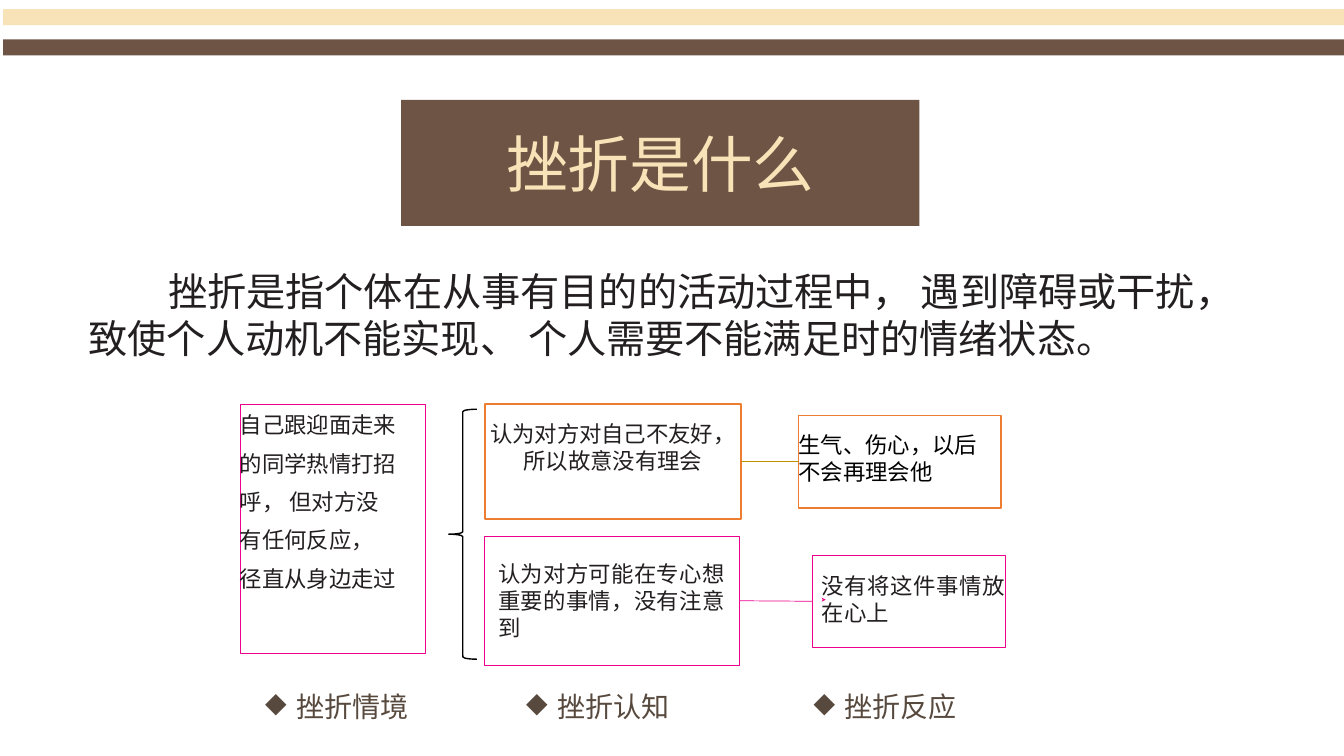
from dataclasses import dataclass

from lxml import etree
from pptx import Presentation
from pptx.dml.color import RGBColor
from pptx.enum.shapes import MSO_CONNECTOR, MSO_SHAPE
from pptx.enum.text import MSO_ANCHOR, PP_ALIGN
from pptx.oxml.ns import qn
from pptx.shapes.autoshape import Shape
from pptx.slide import Slide
from pptx.util import Inches, Pt

RECTANGLE = MSO_SHAPE.RECTANGLE
LEFT_BRACE = MSO_SHAPE.LEFT_BRACE
STRAIGHT = MSO_CONNECTOR.STRAIGHT
MIDDLE, TOP = MSO_ANCHOR.MIDDLE, MSO_ANCHOR.TOP
LEFT, CENTER, JUSTIFY = PP_ALIGN.LEFT, PP_ALIGN.CENTER, PP_ALIGN.JUSTIFY
LEFT_SIDE, RIGHT_SIDE = 1, 3


@dataclass(frozen=True)
class Theme:
    brown: str = "6E5444"
    cream: str = "F8E2B7"
    ink: str = "231F20"
    black: str = "000000"
    white: str = "FFFFFF"
    magenta: str = "EC008C"
    orange: str = "ED7D31"
    gold: str = "BF9000"
    label: str = "57493D"
    chinese_font: str = "Noto Sans CJK SC"
    body_font: str = "Calibri"
    title_size: float = 44
    body_size: float = 28
    label_size: float = 20
    box_size: float = 16
    thin: float = 0.5
    medium: float = 1


THEME = Theme()


@dataclass(frozen=True)
class Area:
    left: float
    top: float
    width: float
    height: float

    def lengths(self) -> list[int]:
        return [Inches(v) for v in (self.left, self.top, self.width, self.height)]


@dataclass(frozen=True)
class TextStyle:
    size: float
    color: str
    align: PP_ALIGN = LEFT
    font: str = THEME.chinese_font
    line_points: float | None = None
    space_before: float = 0


@dataclass(frozen=True)
class Box:
    area: Area
    text: str
    style: TextStyle
    line: str
    line_width: float
    insets: tuple[float, float, float, float] = (0, 0, 0, 0)


def rgb(color: str) -> RGBColor:
    return RGBColor.from_string(color)


def write_text(
    shape: Shape,
    text: str,
    style: TextStyle,
    insets: tuple[float, float, float, float] = (0.1, 0.05, 0.1, 0.05),
    anchor: MSO_ANCHOR = TOP,
) -> None:
    frame = shape.text_frame
    frame.text = text
    frame.word_wrap = True
    frame.vertical_anchor = anchor
    frame.margin_left, frame.margin_top, frame.margin_right, frame.margin_bottom = map(Inches, insets)
    for paragraph in frame.paragraphs:
        paragraph.alignment = style.align
        paragraph.space_before = Pt(style.space_before)
        if style.line_points:
            paragraph.line_spacing = Pt(style.line_points)
        for run in paragraph.runs:
            run.font.size = Pt(style.size)
            run.font.name = style.font
            run.font.color.rgb = rgb(style.color)
            east_asian = etree.SubElement(run.font._element, qn("a:ea"))
            east_asian.set("typeface", THEME.chinese_font)


def set_indent(shape: Shape, margin: float, first_line: float, bullet: str = "") -> None:
    properties = shape.text_frame.paragraphs[0]._p.get_or_add_pPr()
    properties.set("marL", str(Inches(margin)))
    properties.set("indent", str(Inches(first_line)))
    if bullet:
        etree.SubElement(properties, qn("a:buChar")).set("char", bullet)


def paint(shape: Shape, fill: str | None, line: str | None = None, width: float = 0) -> None:
    shape.shadow.inherit = False
    if fill:
        shape.fill.solid()
        shape.fill.fore_color.rgb = rgb(fill)
    else:
        shape.fill.background()
    if line:
        shape.line.color.rgb = rgb(line)
        shape.line.width = Pt(width)
    else:
        shape.line.fill.background()


def add_band(slide: Slide, area: Area, fill: str) -> Shape:
    band = slide.shapes.add_shape(RECTANGLE, *area.lengths())
    paint(band, fill)
    return band


def add_box(slide: Slide, box: Box) -> Shape:
    shape = slide.shapes.add_shape(RECTANGLE, *box.area.lengths())
    paint(shape, THEME.white, box.line, box.line_width)
    write_text(shape, box.text, box.style, box.insets)
    return shape


def link(slide: Slide, thought: Shape, reaction: Shape, color: str) -> None:
    connector = slide.shapes.add_connector(STRAIGHT, 0, 0, 0, 0)
    connector.begin_connect(thought, RIGHT_SIDE)
    connector.end_connect(reaction, LEFT_SIDE)
    connector.line.color.rgb = rgb(color)
    connector.line.width = Pt(THEME.thin)
    etree.SubElement(connector._element.spPr, qn("a:effectLst"))


def add_arrow_tip(slide: Slide) -> None:
    start, *rest = [
        (Inches(x), Inches(y))
        for x, y in ((8.15, 5.93), (8.16, 5.95), (8.15, 5.97), (8.19, 5.95))
    ]
    builder = slide.shapes.build_freeform(*start, scale=1.0)
    builder.add_line_segments(rest, close=True)
    paint(builder.convert_to_shape(), THEME.magenta)


def main() -> None:
    deck = Presentation()
    deck.slide_width, deck.slide_height = Inches(13.33), Inches(7.5)
    slide = deck.slides.add_slide(deck.slide_layouts[6])

    title = add_band(slide, Area(3.98, 0.99, 5.14, 1.25), THEME.brown)
    write_text(title, "挫折是什么", TextStyle(THEME.title_size, THEME.cream, CENTER), anchor=MIDDLE)
    for top, color in ((0.39, THEME.brown), (0.09, THEME.cream)):
        add_band(slide, Area(0.03, top, 13.32, 0.16), color)

    definition = slide.shapes.add_textbox(*Area(0.78, 2.6, 11.72, 1.04).lengths())
    write_text(
        definition,
        "挫折是指个体在从事有目的的活动过程中， 遇到障碍或干扰， 致使个人动机不能实现、 个人需要不能满足时的情绪状态。",
        TextStyle(THEME.body_size, THEME.ink, font=THEME.body_font, line_points=33.6),
    )
    set_indent(definition, 0, 0.79)

    situation_style = TextStyle(THEME.box_size, THEME.ink, JUSTIFY, line_points=24.4, space_before=3)
    centered = TextStyle(THEME.box_size, THEME.ink, CENTER, line_points=19.2)
    justified = TextStyle(THEME.box_size, THEME.ink, JUSTIFY, line_points=19.2)
    plain = TextStyle(THEME.box_size, THEME.black, line_points=19.2)

    situation = "自己跟迎面走来\n的同学热情打招\n呼， 但对方没\n有任何反应，\n径直从身边走过"
    add_box(slide, Box(Area(2.38, 4.01, 1.84, 2.47), situation, situation_style, THEME.magenta, THEME.thin))

    hostile_thought = Box(Area(4.81, 4.01, 2.54, 1.14), "认为对方对自己不友好，所以故意没有理会",
                          centered, THEME.orange, THEME.medium, (0, 0.16, 0, 0))
    hurt_reaction = Box(Area(7.92, 4.12, 2.01, 0.92), "生气、伤心，以后\n不会再理会他",
                        plain, THEME.orange, THEME.medium, (0, 0.16, 0, 0))
    kind_thought = Box(Area(4.8, 5.32, 2.53, 1.28), "认为对方可能在专心想重要的事情，没有注意到",
                       justified, THEME.magenta, THEME.thin, (0.14, 0.24, 0.14, 0))
    calm_reaction = Box(Area(8.06, 5.51, 1.91, 0.91), "没有将这件事情放在心上",
                        justified, THEME.magenta, THEME.thin, (0.09, 0.17, 0, 0))
    for thought, reaction, color in (
        (hostile_thought, hurt_reaction, THEME.gold),
        (kind_thought, calm_reaction, THEME.magenta),
    ):
        link(slide, add_box(slide, thought), add_box(slide, reaction), color)
    add_arrow_tip(slide)

    brace = slide.shapes.add_shape(LEFT_BRACE, *Area(4.45, 4.06, 0.28, 2.48).lengths())
    paint(brace, None, THEME.black, THEME.medium)

    label_style = TextStyle(THEME.label_size, THEME.label, line_points=28.8)
    for left, stage in ((2.53, "挫折情境"), (5.12, "挫折认知"), (7.97, "挫折反应")):
        label = slide.shapes.add_textbox(*Area(left, 6.72, 1.92, 0.47).lengths())
        write_text(label, stage, label_style)
        set_indent(label, 0.31, -0.31, "◆")

    deck.save("out.pptx")


if __name__ == "__main__":
    main()
